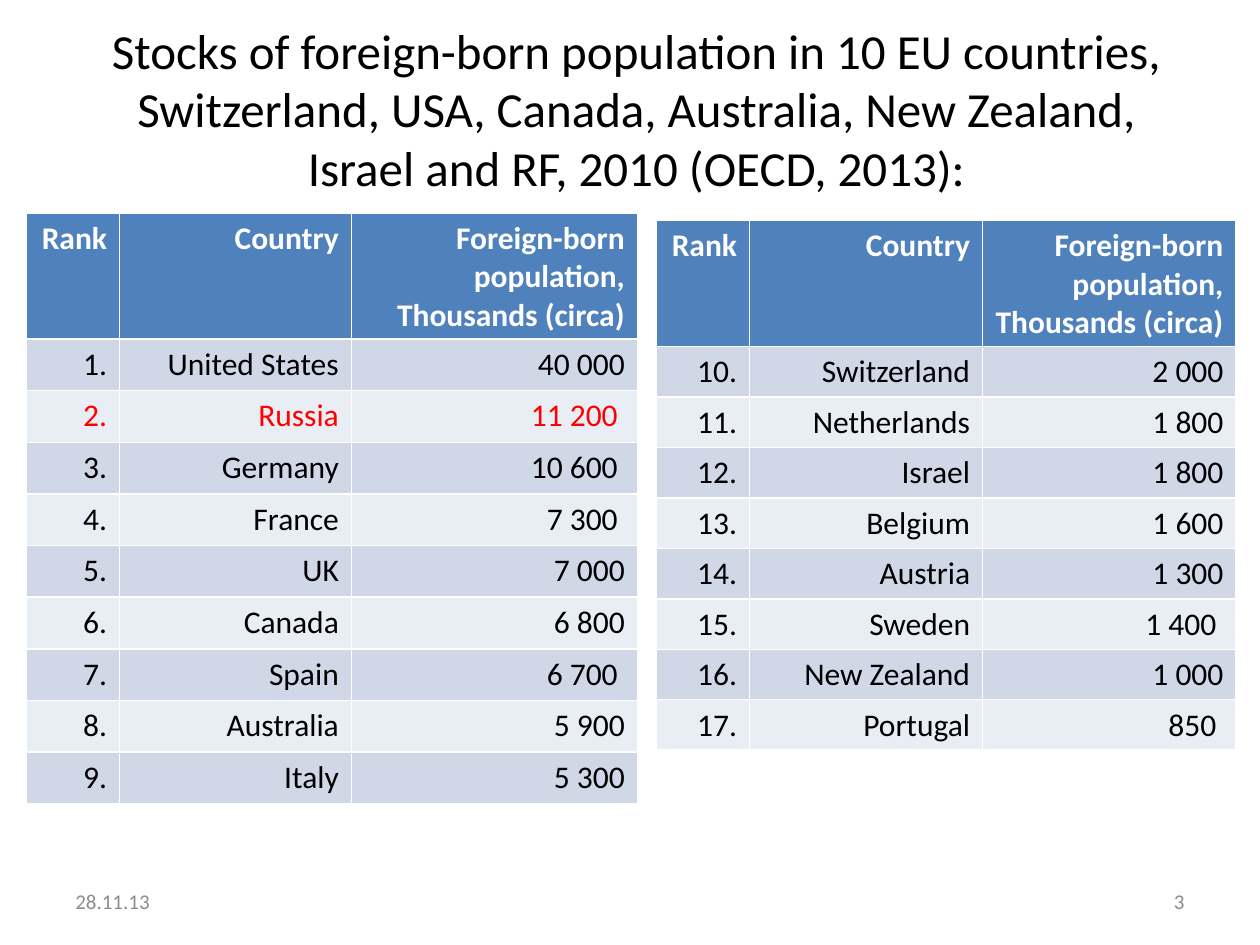
from pptx import Presentation
from pptx.dml.color import RGBColor
from pptx.enum import text
from pptx.util import Inches, Pt

COLORS = {
    "header": "4F81BD", "odd": "D0D8E8", "even": "E9EDF4",
    "white": "FFFFFF", "black": "000000", "red": "FF0000", "gray": "8C8C8C",
}
RIGHT = text.PP_ALIGN.RIGHT
HEADINGS = ("Rank", "Country", "Foreign-born population, Thousands (circa)")
HIGHLIGHTED = "Russia"

# left, top, column widths, header height, row height, first rank, rows
TABLES = [
    (0.21, 1.69, (0.74, 1.84, 2.27), 1.0, 0.41, 1, [
        ("United States", "40 000"), ("Russia", "11 200 "),
        ("Germany", "10 600 "), ("France", "7 300 "), ("UK", "7 000"),
        ("Canada", "6 800"), ("Spain", "6 700 "), ("Australia", "5 900"),
        ("Italy", "5 300"),
    ]),
    (5.21, 1.75, (0.74, 1.85, 2.01), 1.0, 0.4, 10, [
        ("Switzerland", "2 000"), ("Netherlands", "1 800"),
        ("Israel", "1 800"), ("Belgium", "1 600"), ("Austria", "1 300"),
        ("Sweden", "1 400 "), ("New Zealand", "1 000"), ("Portugal", "850 "),
    ]),
]

# text, box, size, color, alignment, anchor
LABELS = [
    ("Stocks of foreign-born population in 10 EU countries, Switzerland, USA, "
     "Canada, Australia, New Zealand, Israel and RF, 2010 (OECD, 2013):",
     (0.66, 0.11, 8.78, 1.51), 28, "black",
     text.PP_ALIGN.CENTER, text.MSO_ANCHOR.TOP),
    ("28.11.13", (0.5, 6.95, 2.33, 0.4), 12, "gray",
     text.PP_ALIGN.LEFT, text.MSO_ANCHOR.MIDDLE),
    ("3", (7.17, 6.95, 2.33, 0.4), 12, "gray", RIGHT, text.MSO_ANCHOR.MIDDLE),
]


def write(frame, words, size, color, alignment, bold=False):
    """Fill a text frame with one formatted paragraph."""
    paragraph = frame.paragraphs[0]
    paragraph.text = words
    paragraph.alignment = alignment
    paragraph.font.name = "Calibri"
    paragraph.font.size = Pt(size)
    paragraph.font.bold = bold
    paragraph.font.color.rgb = RGBColor.from_string(COLORS[color])


presentation = Presentation()
presentation.slide_width = Inches(10)
presentation.slide_height = Inches(7.5)
slide = presentation.slides.add_slide(presentation.slide_layouts[6])

for words, box, size, color, alignment, anchor in LABELS:
    frame = slide.shapes.add_textbox(*map(Inches, box)).text_frame
    frame.word_wrap = True
    frame.vertical_anchor = anchor
    write(frame, words, size, color, alignment)

for left, top, widths, header_height, row_height, first_rank, countries in TABLES:
    rows = [HEADINGS] + [
        (f"{rank}.", *country) for rank, country in enumerate(countries, first_rank)
    ]
    height = header_height + row_height * len(countries)
    # The default table style supplies the white cell borders.
    table = slide.shapes.add_table(
        len(rows), len(widths), Inches(left), Inches(top),
        Inches(sum(widths)), Inches(height)).table
    for column, width in zip(table.columns, widths):
        column.width = Inches(width)

    for index, row in enumerate(rows):
        is_header = index == 0
        table.rows[index].height = Inches(header_height if is_header else row_height)
        if is_header:
            fill, color = "header", "white"
        else:
            fill = "odd" if index % 2 else "even"
            color = "red" if HIGHLIGHTED in row else "black"
        for cell, words in zip(table.rows[index].cells, row):
            cell.fill.solid()
            cell.fill.fore_color.rgb = RGBColor.from_string(COLORS[fill])
            write(cell.text_frame, words, 18, color, RIGHT, bold=is_header)

presentation.save("out.pptx")
